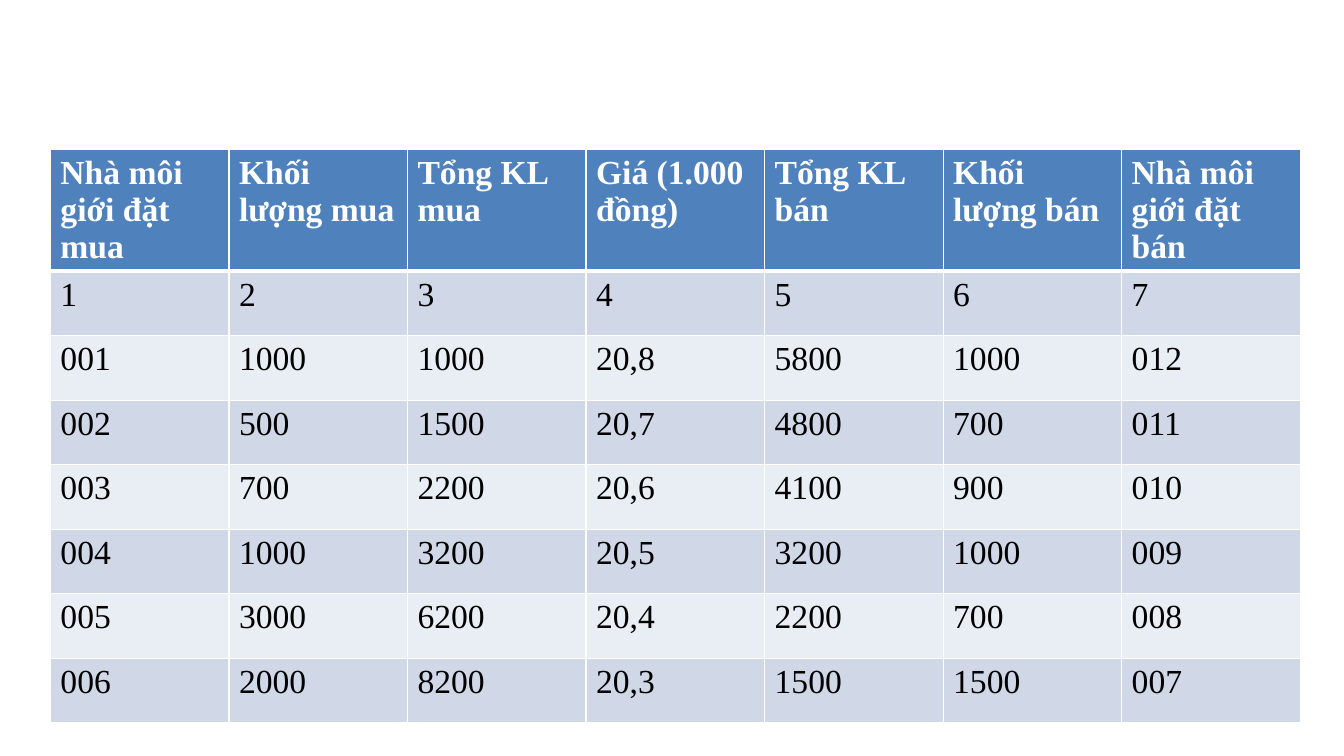
from pptx import Presentation
from pptx.dml.color import RGBColor
from pptx.oxml import parse_xml
from pptx.oxml.ns import nsdecls
from pptx.util import Pt

WHITE = RGBColor(0xFF, 0xFF, 0xFF)
BLACK = RGBColor(0x00, 0x00, 0x00)
HEADER_BLUE = RGBColor(0x4F, 0x81, 0xBD)
BAND_DARK = RGBColor(0xD0, 0xD8, 0xE8)
BAND_LIGHT = RGBColor(0xE9, 0xED, 0xF4)

ORDER_BOOK = [
    ["Nhà môi giới đặt mua", "Khối lượng mua", "Tổng KL mua", "Giá (1.000 đồng)",
     "Tổng KL bán", "Khối lượng bán", "Nhà môi giới đặt bán"],
    ["1", "2", "3", "4", "5", "6", "7"],
    ["001", "1000", "1000", "20,8", "5800", "1000", "012"],
    ["002", "500", "1500", "20,7", "4800", "700", "011"],
    ["003", "700", "2200", "20,6", "4100", "900", "010"],
    ["004", "1000", "3200", "20,5", "3200", "1000", "009"],
    ["005", "3000", "6200", "20,4", "2200", "700", "008"],
    ["006", "2000", "8200", "20,3", "1500", "1500", "007"],
]


def write_text(text_frame, text, font_name, size, color, bold=False):
    paragraph = text_frame.paragraphs[0]
    run = paragraph.add_run()
    run.text = text
    run.font.name = font_name
    run.font.size = Pt(size)
    run.font.color.rgb = color
    run.font.bold = bold


class SlideBuilder:
    font_name = "Times New Roman"
    font_size = 24
    border_color = WHITE
    border_width = 1
    header_rule_width = 3

    def __init__(self, slide):
        self.slide = slide

    def add_borders(self, cell, top, bottom):
        properties = cell._tc.get_or_add_tcPr()
        widths = {"lnL": self.border_width, "lnR": self.border_width,
                  "lnT": top, "lnB": bottom}
        for tag, width in widths.items():
            properties.append(parse_xml(
                f'<a:{tag} {nsdecls("a")} w="{Pt(width)}"><a:solidFill>'
                f'<a:srgbClr val="{self.border_color}"/></a:solidFill></a:{tag}>'))

    def add_table(self, rows, left, top, width, header_height, row_height):
        height = header_height + row_height * (len(rows) - 1)
        frame = self.slide.shapes.add_table(
            len(rows), len(rows[0]), Pt(left), Pt(top), Pt(width), Pt(height))
        table = frame.table
        for row_index, values in enumerate(rows):
            is_header = row_index == 0
            table.rows[row_index].height = Pt(header_height if is_header else row_height)
            band = BAND_DARK if row_index % 2 else BAND_LIGHT
            for column_index, value in enumerate(values):
                cell = table.cell(row_index, column_index)
                self.add_borders(
                    cell,
                    top=self.header_rule_width if row_index == 1 else self.border_width,
                    bottom=self.header_rule_width if is_header else self.border_width)
                cell.fill.solid()
                cell.fill.fore_color.rgb = HEADER_BLUE if is_header else band
                write_text(cell.text_frame, value, self.font_name, self.font_size,
                           WHITE if is_header else BLACK, bold=is_header)


def main():
    presentation = Presentation()
    presentation.slide_width = Pt(960)
    presentation.slide_height = Pt(540)
    slide = presentation.slides.add_slide(presentation.slide_layouts[6])
    builder = SlideBuilder(slide)
    builder.add_table(ORDER_BOOK, left=36, top=106.8, width=892.8,
                      header_height=80, row_height=46.1)
    presentation.save("out.pptx")


if __name__ == "__main__":
    main()
